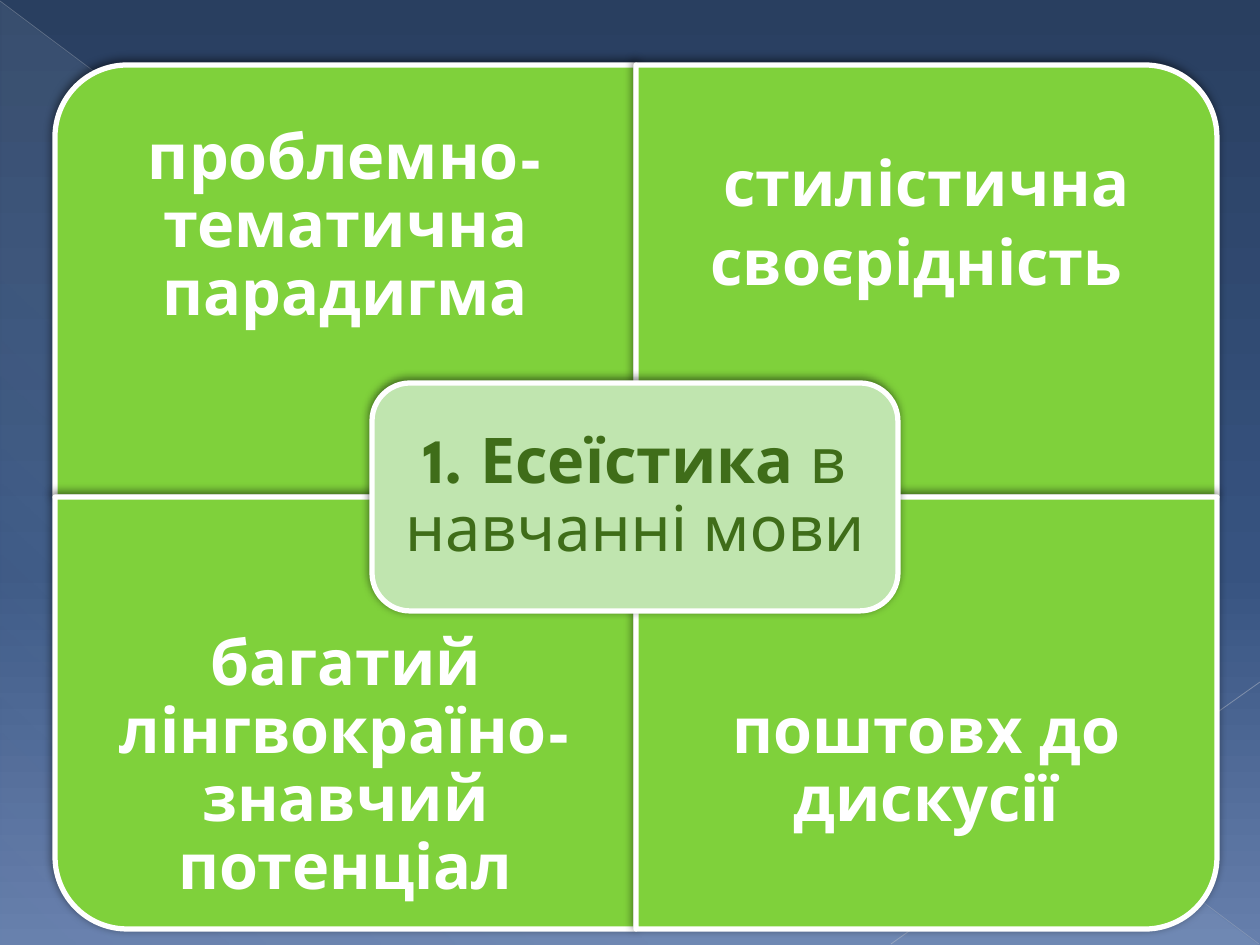
from lxml.etree import SubElement
from pptx import Presentation
from pptx.dml.color import RGBColor
from pptx.enum.shapes import MSO_CONNECTOR, MSO_SHAPE
from pptx.enum.text import MSO_ANCHOR, PP_ALIGN
from pptx.oxml.ns import qn
from pptx.util import Emu, Pt

SCALE = 914400 / 126
WIDTH, HEIGHT = 1260, 945
FONT = "League Spartan"
WHITE, GREEN, PALE, DARK = "FFFFFF", "7FD13B", "C0E5AF", "3F6D19"


def px(*lengths):
    """Turn pixel lengths into a list of EMU values."""
    return [Emu(round(length * SCALE)) for length in lengths]


def add_color(parent, color, opacity=100):
    node = SubElement(parent, qn("a:srgbClr"), val=color)
    if opacity < 100:
        SubElement(node, qn("a:alpha"), val=str(opacity * 1000))


deck = Presentation()
deck.slide_width, deck.slide_height = px(WIDTH, HEIGHT)
page = deck.slides.add_slide(deck.slide_layouts[6])
shapes = page.shapes

# Background and faint corner triangle
page.background.fill.gradient()
page_gradient = page.element.find(".//" + qn("a:gradFill"))
triangle = shapes.add_shape(MSO_SHAPE.RIGHT_TRIANGLE, *px(1, 2, 1258, 943))
triangle.shadow.inherit = False
triangle.line.fill.background()
triangle.fill.gradient()
triangle_gradient = triangle.element.find(".//" + qn("a:gradFill"))

for gradient, angle, stops in [
    (page_gradient, 90, [(0, "293F60", 100), (60, "375380", 100), (100, "667FAC", 100)]),
    (triangle_gradient, 133, [(0, "D6ECFF", 10), (70, "D6ECFF", 8), (100, "D6ECFF", 1)]),
]:
    for child in list(gradient):
        gradient.remove(child)
    stop_list = SubElement(gradient, qn("a:gsLst"))
    for position, color, opacity in stops:
        stop = SubElement(stop_list, qn("a:gs"), pos=str(position * 1000))
        add_color(stop, color, opacity)
    SubElement(gradient, qn("a:lin"), ang=str(angle * 60000), scaled="0")

for ends, color, width, opacity in [
    ((0, 1, 1259, 944), "B7BCC5", 0.39, 35),
    ((1260, 682, 891, 944), "BFC3CB", 0.47, 45),
]:
    line = shapes.add_connector(MSO_CONNECTOR.STRAIGHT, *px(*ends))
    line.line.width = Pt(width)
    line.line.fill.solid()
    add_color(line.element.find(".//" + qn("a:solidFill")), color, opacity)
    SubElement(line.element.spPr, qn("a:effectLst"))

# Four panels, each turned so that its round corner points outwards
LEFT, TOP, PANEL_W, PANEL_H, TEXT_H = 55, 65, 581, 432, 324
cards, texts = [], []
for column, row, turn, runs in [
    (0, 0, 270, [("проблемно-тематична парадигма", 36, True)]),
    (1, 0, 0, [("стилістична своєрідність", 36, True), (" ", 43, True)]),
    (0, 1, 180, [("багатий лінгвокраїно-знавчий потенціал", 36, True)]),
    (1, 1, 90, [("поштовх до дискусії", 36, True)]),
]:
    x, y = LEFT + column * PANEL_W, TOP + row * PANEL_H
    w, h = (PANEL_H, PANEL_W) if turn in (90, 270) else (PANEL_W, PANEL_H)
    panel = shapes.add_shape(
        MSO_SHAPE.ROUND_1_RECTANGLE,
        *px(x + (PANEL_W - w) / 2, y + (PANEL_H - h) / 2, w, h))
    panel.rotation = turn
    cards.append((panel, GREEN))
    text_y = y + row * (PANEL_H - TEXT_H)
    box = shapes.add_textbox(*px(x, text_y, PANEL_W, TEXT_H))
    texts.append((box.text_frame, 35, WHITE, runs))

center = shapes.add_shape(MSO_SHAPE.ROUNDED_RECTANGLE, *px(372, 383, 526, 228))
cards.append((center, PALE))
texts.append((center.text_frame, 19, DARK,
              [("1. Есеїстика", 36, True), (" в навчанні мови", 36, False)]))

for card, color in cards:
    card.fill.solid()
    card.fill.fore_color.rgb = RGBColor.from_string(color)
    card.line.color.rgb = RGBColor.from_string(WHITE)
    card.line.width = Pt(3)
    card.shadow.inherit = False
    shadow = SubElement(
        card.element.spPr.find(qn("a:effectLst")), qn("a:outerShdw"),
        blurRad=str(Pt(5)), dist=str(Pt(2)), dir=str(245 * 60000), rotWithShape="0")
    add_color(shadow, "000000", 50)

for frame, inset, color, runs in texts:
    frame.word_wrap = True
    frame.vertical_anchor = MSO_ANCHOR.MIDDLE
    (frame.margin_left, frame.margin_top,
     frame.margin_right, frame.margin_bottom) = px(*[inset] * 4)
    para = frame.paragraphs[0]
    para.alignment = PP_ALIGN.CENTER
    para.line_spacing = 0.9
    para.space_after = Pt(12.6)
    para.font.name = FONT
    para.font.color.rgb = RGBColor.from_string(color)
    for words, size, bold in runs:
        span = para.add_run()
        span.text = words
        span.font.size = Pt(size)
        span.font.bold = bold

deck.save("out.pptx")
